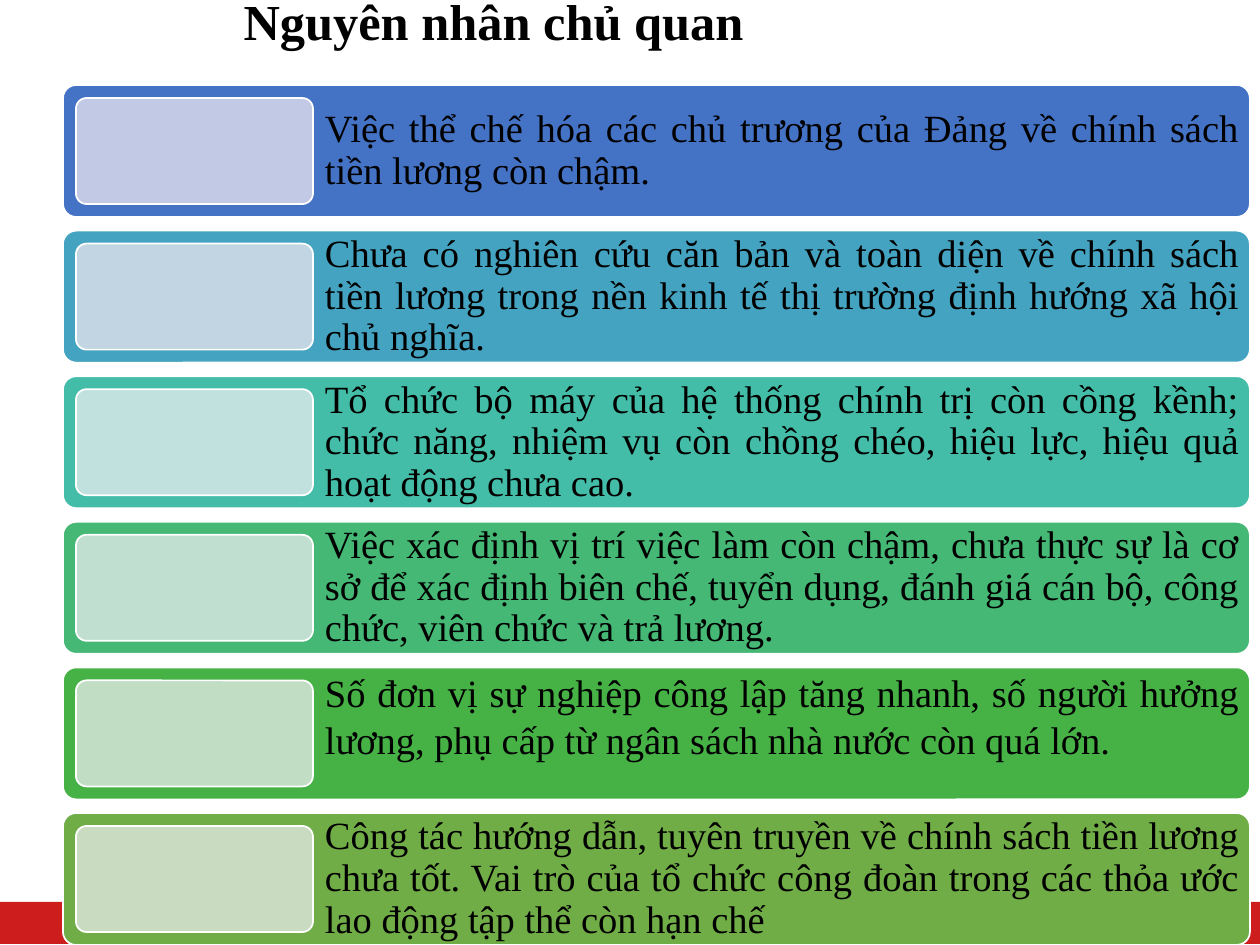
from pptx import Presentation
from pptx import util as u
from pptx.dml.color import RGBColor
from pptx.enum import shapes, text

PX = 914400 // 126
FONT = "Times New Roman"
TITLE = "Nguyên nhân chủ quan"

# (cause, bar colour, panel colour, line spacing, anchor, top inset)
MIDDLE, TOP = text.MSO_ANCHOR.MIDDLE, text.MSO_ANCHOR.TOP
CAUSES = [
    ("Việc thể chế hóa các chủ trương của Đảng về chính sách tiền lương còn chậm.",
     "4472C4", "C1C9E4", 0.9, MIDDLE, 11),
    ("Chưa có nghiên cứu căn bản và toàn diện về chính sách tiền lương trong nền "
     "kinh tế thị trường định hướng xã hội chủ nghĩa.",
     "44A3C0", "C1D6E2", 0.9, MIDDLE, 11),
    ("Tổ chức bộ máy của hệ thống chính trị còn cồng kềnh; chức năng, nhiệm vụ còn "
     "chồng chéo, hiệu lực, hiệu quả hoạt động chưa cao.",
     "43BDA7", "C1E1DF", 0.9, MIDDLE, 11),
    ("Việc xác định vị trí việc làm còn chậm, chưa thực sự là cơ sở để xác định "
     "biên chế, tuyển dụng, đánh giá cán bộ, công chức, viên chức và trả lương.",
     "44B874", "C1DFD1", 0.9, MIDDLE, 11),
    ("Số đơn vị sự nghiệp công lập tăng nhanh, số người hưởng lương, phụ cấp từ "
     "ngân sách nhà nước còn quá lớn.",
     "46B246", "C1DDC4", 1.0, TOP, 2),
    ("Công tác hướng dẫn, tuyên truyền về chính sách tiền lương chưa tốt. Vai trò "
     "của tổ chức công đoàn trong các thỏa ước lao động tập thể còn hạn chế",
     "70AD47", "C9DBC1", 0.9, MIDDLE, 11),
]

SLIDE_W, SLIDE_H = 1260, 945
BAR_X, BAR_W, BAR_H = 63, 1187, 132
FIRST_Y, LAST_Y = 85, SLIDE_H - BAR_H
PITCH = (LAST_Y - FIRST_Y) / (len(CAUSES) - 1)
PANEL_GAP, PANEL_W = 13, 237
TEXT_X = BAR_X + PANEL_GAP + PANEL_W + 1
INSET = 11


def box(*lengths):
    return [round(length * PX) for length in lengths]


def colour(hex_string):
    return RGBColor.from_string(hex_string)


def add_block(kind, place, fill, outlined=True):
    block = slide.shapes.add_shape(kind, *box(*place))
    block.shadow.inherit = False
    block.fill.solid()
    block.fill.fore_color.rgb = colour(fill)
    if outlined:
        block.adjustments[0] = 0.1
        block.line.color.rgb = colour("FFFFFF")
        block.line.width = u.Pt(1)
    else:
        block.line.fill.background()


def add_run(paragraph, words, size, bold=False):
    run = paragraph.add_run()
    run.text = words
    run.font.name = FONT
    run.font.size = u.Pt(size)
    run.font.bold = bold
    run.font.color.rgb = colour("000000")


def add_cause(y, words, spacing, anchor, top_inset):
    frame = slide.shapes.add_textbox(
        *box(TEXT_X, y, BAR_X + BAR_W - TEXT_X, BAR_H)).text_frame
    frame.word_wrap = True
    frame.vertical_anchor = anchor
    frame.margin_left = frame.margin_right = frame.margin_bottom = INSET * PX
    frame.margin_top = top_inset * PX
    paragraph = frame.paragraphs[0]
    paragraph.alignment = text.PP_ALIGN.JUSTIFY
    paragraph.line_spacing = spacing
    add_run(paragraph, words, 22)


prs = Presentation()
prs.slide_width, prs.slide_height = box(SLIDE_W, SLIDE_H)
slide = prs.slides.add_slide(prs.slide_layouts[5])

title = slide.shapes.title
title.left, title.top, title.width, title.height = box(231, 21, 1134, 67)
title.text_frame.vertical_anchor = MIDDLE
title.text_frame.auto_size = text.MSO_AUTO_SIZE.NONE
heading = title.text_frame.paragraphs[0]
heading.alignment = text.PP_ALIGN.LEFT
heading.line_spacing = 0.9
add_run(heading, TITLE, 28.8, bold=True)
heading.add_line_break()
heading.font.size = u.Pt(28.8)

add_block(shapes.MSO_SHAPE.RECTANGLE, (0, 902, SLIDE_W, 42), "CD1D1D", outlined=False)

ROUNDED = shapes.MSO_SHAPE.ROUNDED_RECTANGLE
for row, (words, bar, panel, spacing, anchor, top_inset) in enumerate(CAUSES):
    y = FIRST_Y + row * PITCH
    add_block(ROUNDED, (BAR_X, y, BAR_W, BAR_H), bar)
    add_cause(y, words, spacing, anchor, top_inset)
    add_block(ROUNDED, (BAR_X + PANEL_GAP, y + PANEL_GAP,
                        PANEL_W, BAR_H - 2 * PANEL_GAP), panel)

prs.save("out.pptx")
